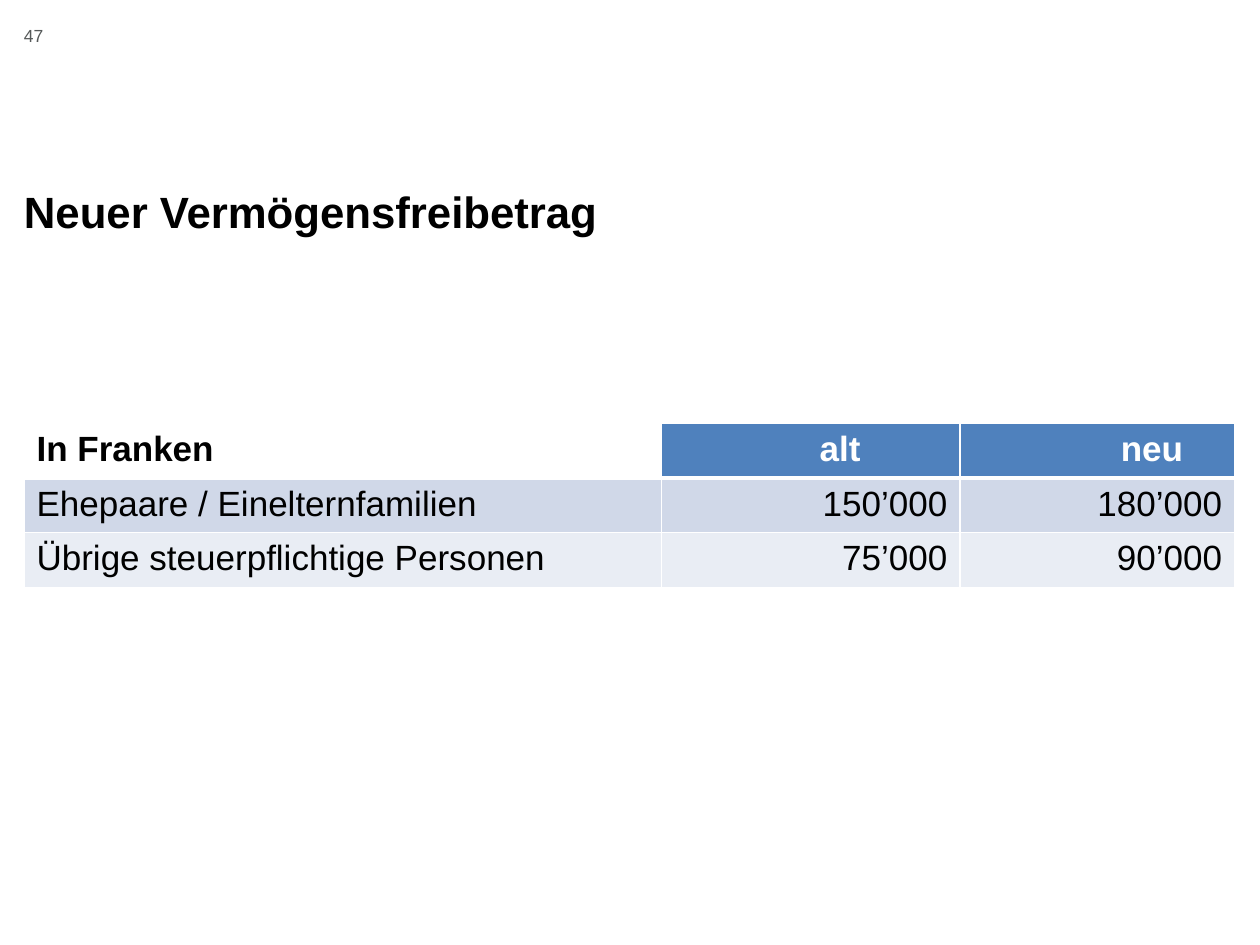
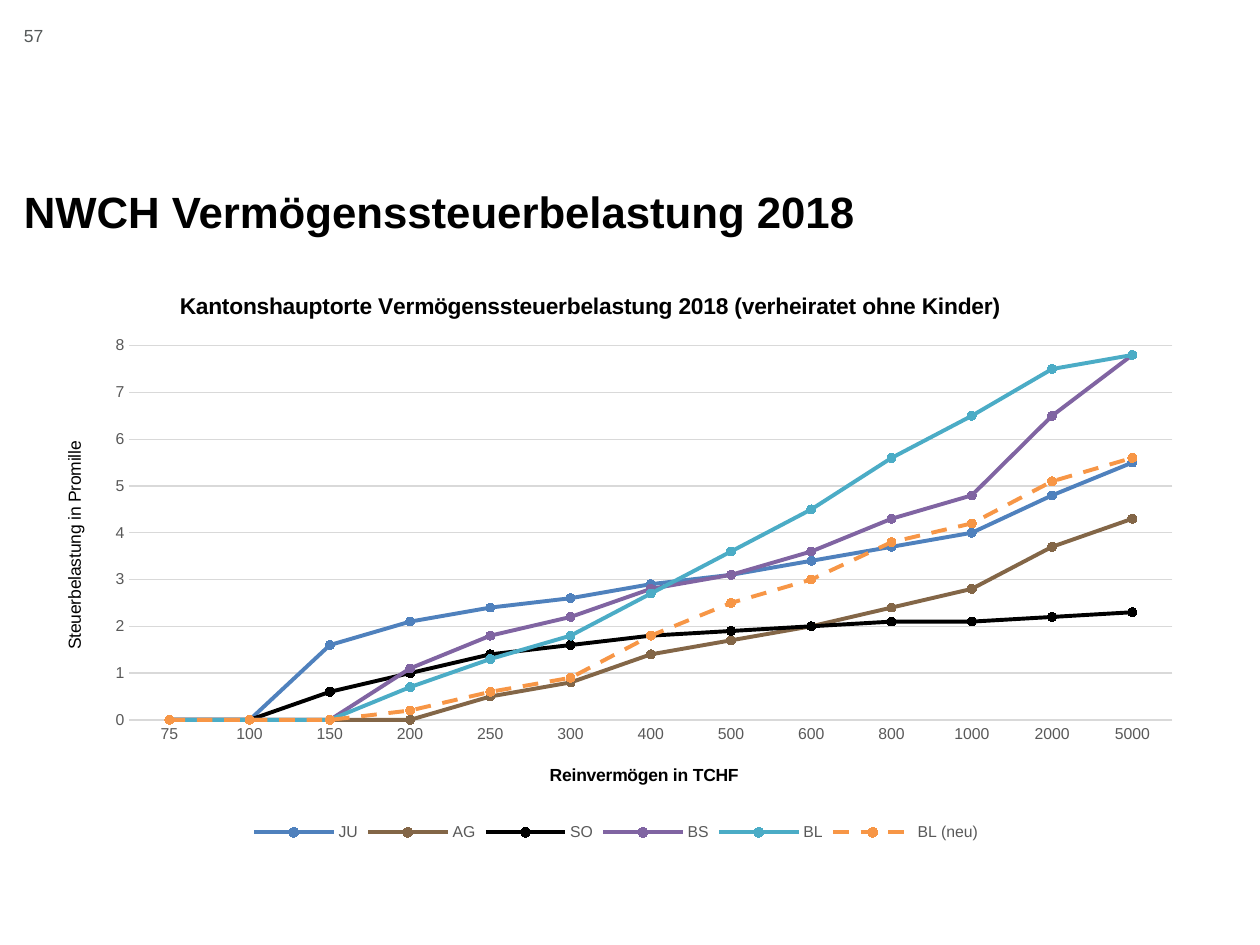
from lxml import etree
from pptx import Presentation
from pptx.chart.data import CategoryChartData
from pptx.dml.color import RGBColor
from pptx.enum.chart import XL_CHART_TYPE, XL_LEGEND_POSITION, XL_MARKER_STYLE, XL_TICK_MARK
from pptx.enum.dml import MSO_LINE
from pptx.enum.text import MSO_ANCHOR, MSO_AUTO_SIZE, PP_ALIGN
from pptx.oxml.ns import qn
from pptx.util import Inches, Pt

FONT = "Arial"
BLACK, WHITE, GRAY, PALE_GRAY = "000000", "FFFFFF", "595959", "D9D9D9"
NUMBER_COLOR, HEADER_COLOR = "555959", "4F81BD"
BAND_COLORS = ["D0D8E8", "E9EDF4"]
LEFT, CONTENT_WIDTH = 0.19, 9.61

ALLOWANCE_SLIDE = ("47", "Neuer Vermögensfreibetrag")
ALLOWANCES = [
    ("In Franken", "alt", "neu"),
    ("Ehepaare / Einelternfamilien", "150’000", "180’000"),
    ("Übrige steuerpflichtige Personen", "75’000", "90’000"),
]
COLUMN_WIDTHS = [5.06, 2.37, 2.18]
ROW_HEIGHT = 0.41
HEADER_RIGHT_MARGINS = [0.1, 0.79, 0.41]

BURDEN_SLIDE = ("57", "NWCH Vermögenssteuerbelastung 2018")
CHART_TITLE = "Kantonshauptorte Vermögenssteuerbelastung 2018 (verheiratet ohne Kinder)"
WEALTH_TITLE = "Reinvermögen in TCHF"
BURDEN_TITLE = "Steuerbelastung in Promille"
WEALTH_LEVELS = ["75", "100", "150", "200", "250", "300", "400",
                 "500", "600", "800", "1000", "2000", "5000"]
BURDENS = [
    ("JU", "4F81BD", [0, 0, 1.6, 2.1, 2.4, 2.6, 2.9, 3.1, 3.4, 3.7, 4, 4.8, 5.5]),
    ("AG", "836647", [0, 0, 0, 0, 0.5, 0.8, 1.4, 1.7, 2, 2.4, 2.8, 3.7, 4.3]),
    ("SO", "000000", [0, 0, 0.6, 1, 1.4, 1.6, 1.8, 1.9, 2, 2.1, 2.1, 2.2, 2.3]),
    ("BS", "8064A2", [0, 0, 0, 1.1, 1.8, 2.2, 2.8, 3.1, 3.6, 4.3, 4.8, 6.5, 7.8]),
    ("BL", "4BACC6", [0, 0, 0, 0.7, 1.3, 1.8, 2.7, 3.6, 4.5, 5.6, 6.5, 7.5, 7.8]),
    ("BL (neu)", "F79646", [0, 0, 0, 0.2, 0.6, 0.9, 1.8, 2.5, 3, 3.8, 4.2, 5.1, 5.6]),
]
DASHED_SERIES = "BL (neu)"


def rgb(color):
    return RGBColor.from_string(color)


def style_font(font, size, color=BLACK, bold=False):
    font.name, font.size, font.bold = FONT, Pt(size), bold
    font.color.rgb = rgb(color)


def clear_margins(frame):
    frame.margin_left = frame.margin_right = frame.margin_top = frame.margin_bottom = 0
    frame.word_wrap = True


def add_titled_slide(presentation, number, title_text):
    slide = presentation.slides.add_slide(presentation.slide_layouts[5])
    title = slide.shapes.title
    title.left, title.top = Inches(LEFT), Inches(1.06)
    title.width, title.height = Inches(CONTENT_WIDTH), Inches(0.81)
    frame = title.text_frame
    clear_margins(frame)
    frame.auto_size = MSO_AUTO_SIZE.NONE
    frame.vertical_anchor = MSO_ANCHOR.BOTTOM
    frame.text = title_text
    paragraph = frame.paragraphs[0]
    paragraph.alignment, paragraph.line_spacing = PP_ALIGN.LEFT, 0.7
    style_font(paragraph.font, 25, bold=True)

    number_box = slide.shapes.add_textbox(Inches(LEFT), Inches(0.2), Inches(0.44), Inches(0.4))
    clear_margins(number_box.text_frame)
    number_box.text_frame.text = number
    style_font(number_box.text_frame.paragraphs[0].font, 10, NUMBER_COLOR)
    return slide


def add_borders(cell, widths):
    """Draw white borders; widths in points run left, right, top, bottom."""
    properties = cell._tc.get_or_add_tcPr()
    for side, width in zip("LRTB", widths):
        line = etree.SubElement(properties, qn(f"a:ln{side}"), w=str(Pt(width)))
        fill = etree.SubElement(line, qn("a:solidFill"))
        etree.SubElement(fill, qn("a:srgbClr"), val=WHITE)


def fill_cell(cell, text, row, column):
    is_header = row == 0
    add_borders(cell, [1, 1, 3 if row == 1 else 1, 3 if is_header else 1])
    if is_header and column == 0:
        cell.fill.background()
    else:
        cell.fill.solid()
        cell.fill.fore_color.rgb = rgb(HEADER_COLOR if is_header else BAND_COLORS[row - 1])
    if is_header:
        cell.margin_right = Inches(HEADER_RIGHT_MARGINS[column])
    cell.text = text
    paragraph = cell.text_frame.paragraphs[0]
    paragraph.alignment = PP_ALIGN.RIGHT if column else PP_ALIGN.LEFT
    style_font(paragraph.font, 20, WHITE if is_header and column else BLACK, is_header)


def add_allowance_table(slide):
    table = slide.shapes.add_table(
        len(ALLOWANCES), len(COLUMN_WIDTHS), Inches(LEFT), Inches(3.36),
        Inches(CONTENT_WIDTH), Inches(ROW_HEIGHT * len(ALLOWANCES))).table
    for column, width in zip(table.columns, COLUMN_WIDTHS):
        column.width = Inches(width)
    for row, texts in enumerate(ALLOWANCES):
        for column, text in enumerate(texts):
            fill_cell(table.cell(row, column), text, row, column)


def set_layout(element, position, **shares):
    """Place a chart part by shares of the chart's size."""
    layout = element.find(qn("c:layout"))
    if layout is not None:
        element.remove(layout)
    layout = etree.Element(qn("c:layout"))
    element.insert(position, layout)
    manual = etree.SubElement(layout, qn("c:manualLayout"))
    if "w" in shares:
        etree.SubElement(manual, qn("c:layoutTarget"), val="inner")
    for key in "xy":
        etree.SubElement(manual, qn(f"c:{key}Mode"), val="edge")
    for key, share in shares.items():
        etree.SubElement(manual, qn(f"c:{key}"), val=str(share))


def set_title(owner, text, size, bold, x, y):
    title = owner.chart_title if hasattr(owner, "chart_title") else owner.axis_title
    title.text_frame.text = text
    style_font(title.text_frame.paragraphs[0].font, size, bold=bold)
    set_layout(title._element, 1, x=x, y=y)


def style_series(series, color):
    series.smooth = False
    series.format.line.width = Pt(2.25)
    series.format.line.color.rgb = rgb(color)
    if series.name == DASHED_SERIES:
        series.format.line.dash_style = MSO_LINE.DASH
    marker = series.marker
    marker.style, marker.size = XL_MARKER_STYLE.CIRCLE, 5
    marker.format.fill.solid()
    marker.format.fill.fore_color.rgb = rgb(color)
    marker.format.line.color.rgb = rgb(color)


def add_burden_chart(slide):
    data = CategoryChartData(number_format="0.0")
    data.categories = WEALTH_LEVELS
    for name, _, values in BURDENS:
        data.add_series(name, values)
    chart = slide.shapes.add_chart(XL_CHART_TYPE.LINE_MARKERS, Inches(0.29), Inches(2.15),
                                   Inches(9.2), Inches(4.57), data).chart
    style_font(chart.font, 10)
    chart.plots[0].vary_by_categories = False
    for series, (_, color, _) in zip(chart.plots[0].series, BURDENS):
        style_series(series, color)

    wealth_axis, burden_axis = chart.category_axis, chart.value_axis
    for axis in (wealth_axis, burden_axis):
        axis.major_tick_mark = axis.minor_tick_mark = XL_TICK_MARK.NONE
        style_font(axis.tick_labels.font, 9, GRAY)
    burden_axis.minimum_scale, burden_axis.maximum_scale = 0, 8
    burden_axis.major_unit = 1
    burden_axis.tick_labels.number_format = "0"
    burden_axis.tick_labels.number_format_is_linked = False
    burden_axis.format.line.fill.background()
    for line in (wealth_axis.format.line, burden_axis.major_gridlines.format.line):
        line.width = Pt(0.75)
        line.color.rgb = rgb(PALE_GRAY)

    set_title(chart, CHART_TITLE, 13, True, x=0.12, y=0.03)
    set_title(wealth_axis, WEALTH_TITLE, 10, True, x=0.44, y=0.85)
    set_title(burden_axis, BURDEN_TITLE, 10, False, x=0.02, y=0.29)
    set_layout(chart._chartSpace.chart.plotArea, 0, x=0.08, y=0.13, w=0.9, h=0.65)

    chart.has_legend = True
    chart.legend.position = XL_LEGEND_POSITION.BOTTOM
    chart.legend.include_in_layout = False
    style_font(chart.legend.font, 9, GRAY)


def main():
    presentation = Presentation()
    presentation.slide_width, presentation.slide_height = Inches(10), Inches(7.5)
    add_allowance_table(add_titled_slide(presentation, *ALLOWANCE_SLIDE))
    add_burden_chart(add_titled_slide(presentation, *BURDEN_SLIDE))
    presentation.save("out.pptx")


if __name__ == "__main__":
    main()
